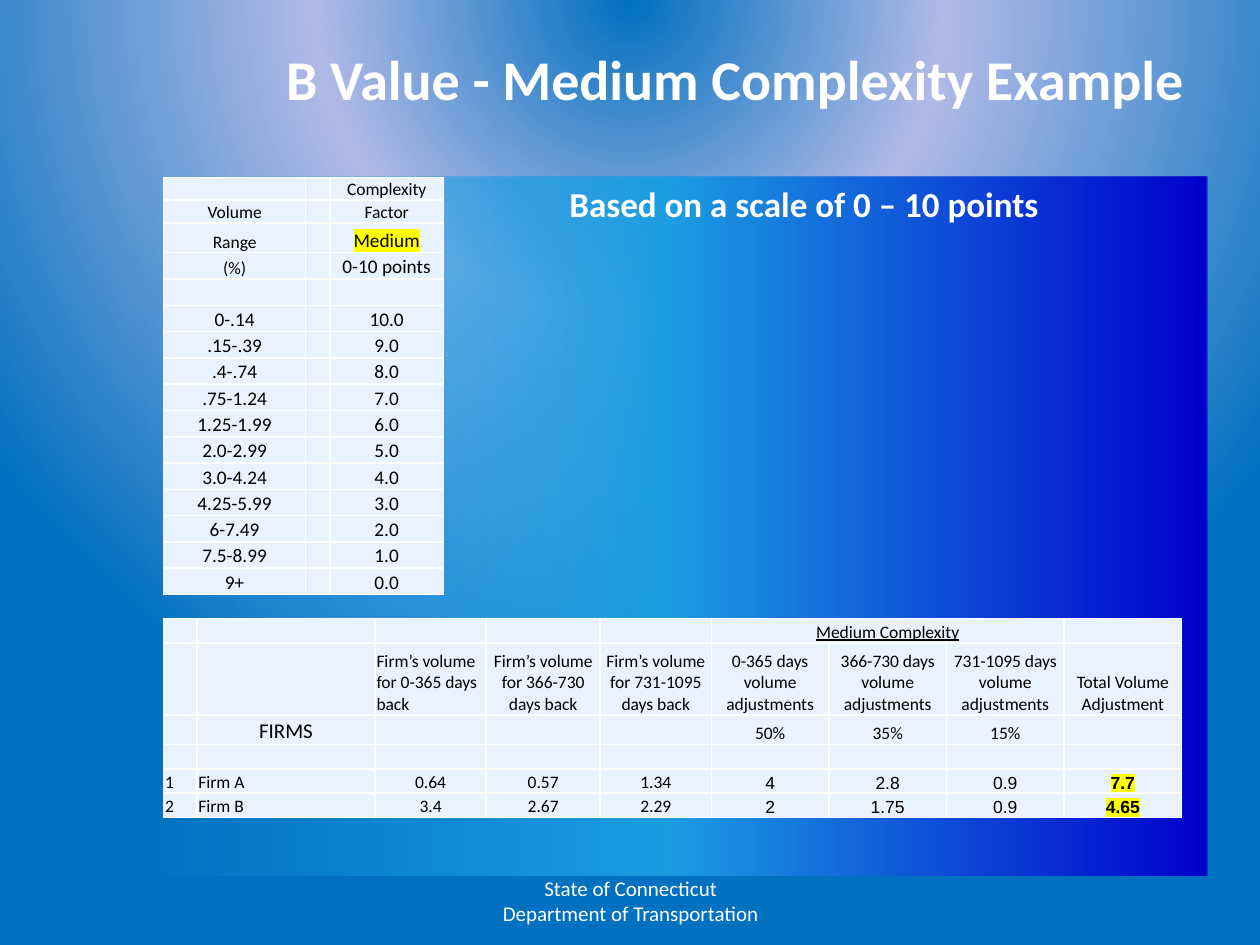
from dataclasses import dataclass
from lxml import etree
from pptx import Presentation
from pptx.dml.color import RGBColor
from pptx.enum.shapes import MSO_SHAPE
from pptx.enum.text import MSO_ANCHOR, PP_ALIGN
from pptx.oxml.ns import qn
from pptx.util import Cm, Pt

LEFT, MID, RIGHT = PP_ALIGN.LEFT, PP_ALIGN.CENTER, PP_ALIGN.RIGHT
TOP, CENTRE, LOW = MSO_ANCHOR.TOP, MSO_ANCHOR.MIDDLE, MSO_ANCHOR.BOTTOM
RECT = MSO_SHAPE.RECTANGLE


@dataclass
class Theme:
    white: str = "FFFFFF"
    black: str = "000000"
    cell: str = "E8F3FF"
    mark: str = "FFFF00"
    blue: str = "0070C0"
    mauve: str = "B1BAE6"
    navy: str = "0000CC"
    sky: str = "1C9DE2"
    font: str = "Calibri"
    alt: str = "Arial"
    title: int = 32
    lead: int = 20
    firms: int = 12
    foot: int = 12
    scale: int = 11
    small: int = 10


theme = Theme()


def ink(frame, size, color, bold=False, name=theme.font, mark=None):
    """Format every run of a text frame."""
    for para in frame.paragraphs:
        for run in para.runs:
            font = run.font
            font.size, font.bold, font.name = Pt(size), bold, name
            font.color.rgb = RGBColor.from_string(color)
            if mark:
                light = etree.Element(qn("a:highlight"))
                etree.SubElement(light, qn("a:srgbClr"), val=mark)
                font.fill  # colour stays ahead of the highlight
                run.font._element.find(qn("a:solidFill")).addnext(light)


def grid(left, top, widths, heights, rows):
    """Add a pale table with white rules and small centred text."""
    table = slide.shapes.add_table(
        len(heights), len(widths), left, top, Cm(sum(widths)), Cm(sum(heights))
    ).table
    table.first_row = table.horz_banding = False
    for col, width in zip(table.columns, widths):
        col.width = Cm(width)
    for line, height, texts in zip(table.rows, heights, rows):
        line.height = Cm(height)
        for cell, text in zip(line.cells, texts):
            cell.margin_left = cell.margin_right = cell.margin_top = Cm(0.03)
            cell.margin_bottom = 0
            cell.vertical_anchor = LOW
            cell.fill.solid()
            cell.fill.fore_color.rgb = RGBColor.from_string(theme.cell)
            para = cell.text_frame.paragraphs[0]
            para.text = text
            para.alignment = MID
            ink(cell.text_frame, theme.small, theme.black)
            if not text:
                etree.SubElement(para._p, qn("a:endParaRPr"), sz=str(theme.small * 100))
            props = cell._tc.get_or_add_tcPr()
            for spot, side in enumerate(("lnL", "lnR", "lnT", "lnB")):
                edge = etree.Element(qn("a:" + side), w=str(Pt(1)))
                paint = etree.SubElement(edge, qn("a:solidFill"))
                etree.SubElement(paint, qn("a:srgbClr"), val=theme.white)
                props.insert(spot, edge)
    return table


deck = Presentation()
deck.slide_width, deck.slide_height = Cm(25.4), Cm(19.05)
slide = deck.slides.add_slide(deck.slide_layouts[6])

# Backdrop and panel gradients: position, colour, opacity
panel = slide.shapes.add_shape(RECT, Cm(2.67), Cm(3.56), Cm(21.67), Cm(14.1))
panel.shadow.inherit = False
panel.line.fill.background()
looks = (
    (slide.background.fill, slide.element.cSld.find(qn("p:bg")),
     ((0, theme.blue, 100), (40, theme.mauve, 100), (100, theme.blue, 100))),
    (panel.fill, panel.element,
     ((0, theme.navy, 100), (50, theme.sky, 100), (100, theme.sky, 0))),
)
for fill, host, stops in looks:
    fill.gradient()
    grad = host.find(".//" + qn("a:gradFill"))
    grad.clear()
    ramp = etree.SubElement(grad, qn("a:gsLst"))
    for spot, color, alpha in stops:
        stop = etree.SubElement(ramp, qn("a:gs"), pos=str(spot * 1000))
        tone = etree.SubElement(stop, qn("a:srgbClr"), val=color)
        if alpha < 100:
            etree.SubElement(tone, qn("a:alpha"), val=str(alpha * 1000))
    if host is panel.element:
        etree.SubElement(grad, qn("a:lin"), ang=str(180 * 60000), scaled="0")
    else:
        path = etree.SubElement(grad, qn("a:path"), path="circle")
        etree.SubElement(path, qn("a:fillToRect"),
                         l="50000", t="-80000", r="50000", b="180000")

# Title, footer and panel heading
title = slide.shapes.add_textbox(Cm(1.27), Cm(0.76), Cm(22.86), Cm(1.63))
foot = slide.shapes.add_textbox(Cm(8.69), Cm(17.65), Cm(8.05), Cm(1.02))
for box, text, size, bold, align, anchor in (
    (title, "B Value - Medium Complexity Example", theme.title, True, RIGHT, CENTRE),
    (foot, "State of Connecticut\vDepartment of Transportation",
     theme.foot, False, MID, CENTRE),
    (panel, "Based on a scale of 0 – 10 points", theme.lead, True, LEFT, TOP),
):
    frame = box.text_frame
    frame.word_wrap = True
    frame.vertical_anchor = anchor
    para = frame.paragraphs[0]
    para.text = text
    para.alignment = align
    ink(frame, size, theme.white, bold)
panel.text_frame.paragraphs[0]._p.get_or_add_pPr().set("marL", str(Cm(8.56)))

# Firm volumes
firms = grid(
    Cm(3.3), Cm(12.47),
    [0.67, 3.59, 2.24, 2.3, 2.24] + [2.37] * 4,
    [0.49, 1.45, 0.6, 0.49, 0.49, 0.49],
    [
        [""] * 5 + ["Medium Complexity"] + [""] * 3,
        ["", "", "Firm’s volume for 0-365 days back",
         "Firm’s volume for 366-730 days back",
         "Firm’s volume for 731-1095 days back",
         "0-365 days volume adjustments", "366-730 days volume adjustments",
         "731-1095 days volume adjustments", "Total Volume Adjustment"],
        ["", "FIRMS", "", "", "", "50%", "35%", "15%", ""],
        [""] * 9,
        ["1", "Firm A", "0.64", "0.57", "1.34", "4", "2.8", "0.9", "7.7"],
        ["2", "Firm B", "3.4", "2.67", "2.29", "2", "1.75", "0.9", "4.65"],
    ],
)
head = firms.cell(0, 5)
head.merge(firms.cell(0, 7))
head.text_frame.paragraphs[0].runs[0].font.underline = True
ink(firms.cell(2, 1).text_frame, theme.firms, theme.black)
for row, col in ((1, 2), (4, 0), (4, 1), (5, 0), (5, 1)):
    firms.cell(row, col).text_frame.paragraphs[0].alignment = LEFT
for row in (4, 5):
    for col in (5, 6, 7):
        ink(firms.cell(row, col).text_frame, theme.small, theme.black, name=theme.alt)
    ink(firms.cell(row, 8).text_frame, theme.small, theme.black, True,
        theme.alt, theme.mark)

# Points by volume range
bands = ["0-.14", ".15-.39", ".4-.74", ".75-1.24", "1.25-1.99", "2.0-2.99",
         "3.0-4.24", "4.25-5.99", "6-7.49", "7.5-8.99", "9+"]
heads = [["", "", "Complexity"], ["Volume", "", "Factor"], ["Range", "", "Medium"],
         ["(%)", "", "0-10 points"], ["", "", ""]]
scale = grid(
    Cm(3.3), Cm(3.58), [2.86, 0.49, 2.29], [0.45, 0.46, 0.6] + [0.53] * 13,
    heads + [[band, "", f"{10 - i}.0"] for i, band in enumerate(bands)],
)
ink(scale.cell(2, 2).text_frame, theme.scale, theme.black, mark=theme.mark)
ink(scale.cell(3, 2).text_frame, theme.scale, theme.black)
for row in range(len(heads), len(scale.rows)):
    for col in (0, 2):
        ink(scale.cell(row, col).text_frame, theme.scale, theme.black)

deck.save("out.pptx")
